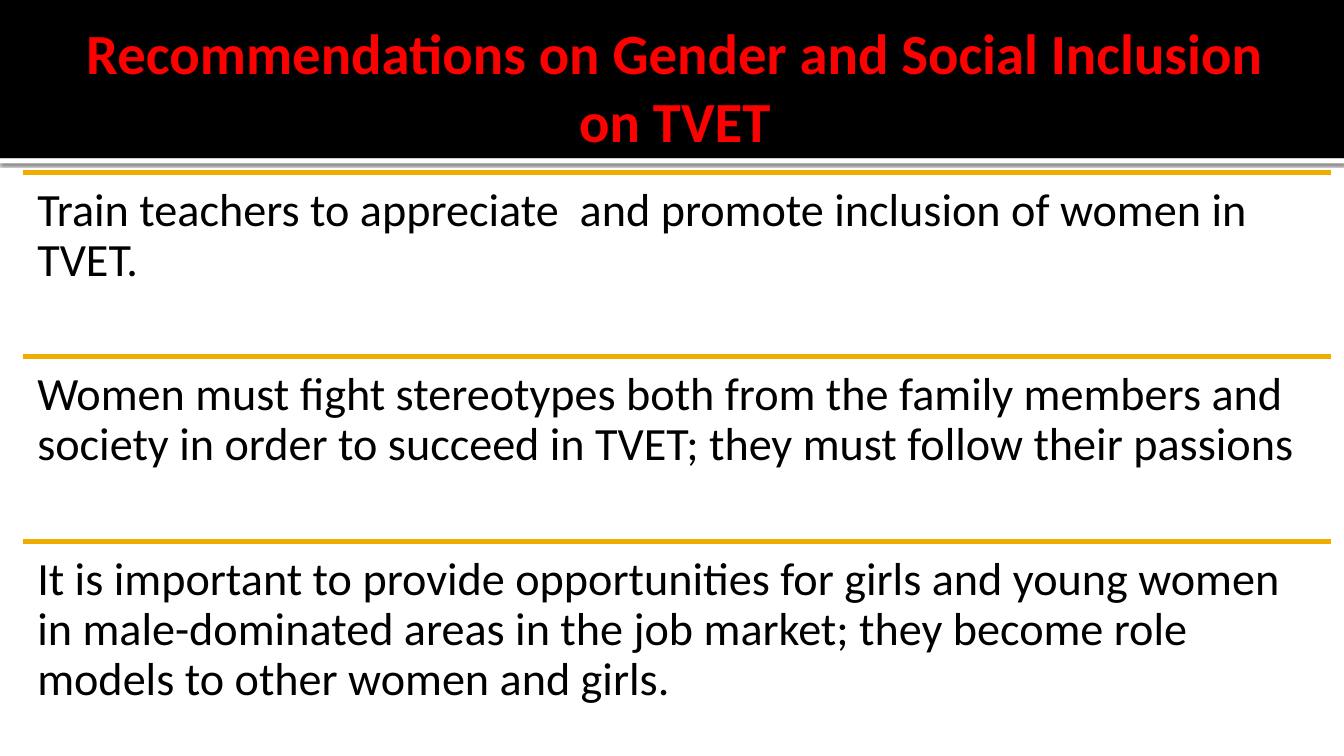
from dataclasses import dataclass

from lxml.etree import SubElement
from pptx import Presentation
from pptx.dml.color import RGBColor
from pptx.enum.shapes import MSO_CONNECTOR, MSO_SHAPE
from pptx.enum.text import MSO_ANCHOR, PP_ALIGN
from pptx.oxml.ns import qn
from pptx.util import Pt

PX = 9144  # EMU per px, 100 px to the inch
COLORS = {"paper": "FFFFFF", "band": "000000", "title": "FF0000",
          "rule": "F0AD00", "body": "000000", "shadow": "000000"}
FONT = "Calibri"


@dataclass(frozen=True)
class Box:
    left: int
    top: int
    width: int
    height: int

    def emu(self) -> tuple[int, ...]:
        return tuple(v * PX for v in (self.left, self.top, self.width, self.height))


@dataclass(frozen=True)
class Recommendation:
    text: str
    box: Box


SLIDE = Box(0, 0, 1333, 750)
HEADER = Box(0, 0, 1333, 157)
HEADER_EDGE = Box(0, 157, 1333, 5)
TITLE_BOX = Box(67, 17, 1200, 137)
FIRST_ROW = Box(23, 171, 1297, 183)
TITLE = "Recommendations on Gender and Social Inclusion on TVET"
TEXTS = (
    "Train teachers to appreciate  and promote inclusion of women in TVET.",
    "Women must fight stereotypes both from the family members and society "
    "in order to succeed in TVET; they must follow their passions",
    "It is important to provide opportunities for girls and young women in "
    "male-dominated areas in the job market; they become role models to "
    "other women and girls.",
)
RECOMMENDATIONS = [
    Recommendation(text, Box(FIRST_ROW.left, FIRST_ROW.top + i * FIRST_ROW.height,
                             FIRST_ROW.width, FIRST_ROW.height))
    for i, text in enumerate(TEXTS)
]

TITLE_FORMAT = {
    "frame": {"margin_left": 10 * PX, "margin_top": 5 * PX, "margin_right": 5 * PX,
              "margin_bottom": 5 * PX, "vertical_anchor": MSO_ANCHOR.MIDDLE},
    "para": {"alignment": PP_ALIGN.CENTER},
    "font": {"size": Pt(40.5), "bold": True},
}
BODY_FORMAT = {
    "frame": {"margin_left": 14 * PX, "margin_top": 14 * PX, "margin_right": 14 * PX,
              "margin_bottom": 14 * PX, "vertical_anchor": MSO_ANCHOR.TOP},
    "para": {"alignment": PP_ALIGN.LEFT, "line_spacing": 0.9},
    "font": {"size": Pt(33), "bold": False},
}


def rgb(name: str) -> RGBColor:
    return RGBColor.from_string(COLORS[name])


def apply(target, values: dict) -> None:
    for name, value in values.items():
        setattr(target, name, value)


def add_bar(page, box: Box, color: str):
    bar = page.shapes.add_shape(MSO_SHAPE.RECTANGLE, *box.emu())
    bar.shadow.inherit = False
    bar.fill.solid()
    bar.fill.fore_color.rgb = rgb(color)
    bar.line.fill.background()
    return bar


def add_drop_shadow(shape) -> None:
    effects = shape._element.spPr.find(qn("a:effectLst"))
    shadow = SubElement(effects, qn("a:outerShdw"), blurRad=str(Pt(2.5)),
                        dist=str(Pt(0.8)), dir="5400000", rotWithShape="0")
    color = SubElement(shadow, qn("a:srgbClr"), val=COLORS["shadow"])
    SubElement(color, qn("a:alpha"), val="60000")


def add_text(page, box: Box, text: str, color: str, style: dict) -> None:
    frame = page.shapes.add_textbox(*box.emu()).text_frame
    frame.word_wrap = True
    apply(frame, style["frame"])
    para = frame.paragraphs[0]
    apply(para, style["para"])
    span = para.add_run()
    span.text = text
    apply(span.font, {"name": FONT, **style["font"]})
    span.font.color.rgb = rgb(color)


def add_rule(page, box: Box) -> None:
    left, top, width, _ = box.emu()
    rule = page.shapes.add_connector(MSO_CONNECTOR.STRAIGHT, left, top, left + width, top)
    rule.line.color.rgb = rgb("rule")
    rule.line.width = Pt(3.78)
    SubElement(rule._element.spPr, qn("a:effectLst"))


def main() -> None:
    deck = Presentation()
    deck.slide_width, deck.slide_height = SLIDE.emu()[2:]
    page = deck.slides.add_slide(deck.slide_layouts[6])
    page.background.fill.solid()
    page.background.fill.fore_color.rgb = rgb("paper")

    # Header band with its shaded lower edge
    add_drop_shadow(add_bar(page, HEADER_EDGE, "paper"))
    add_bar(page, HEADER, "band")
    add_text(page, TITLE_BOX, TITLE, "title", TITLE_FORMAT)

    # Ruled recommendations
    for item in RECOMMENDATIONS:
        add_rule(page, item.box)
        add_text(page, item.box, item.text, "body", BODY_FORMAT)

    deck.save("out.pptx")


if __name__ == "__main__":
    main()
